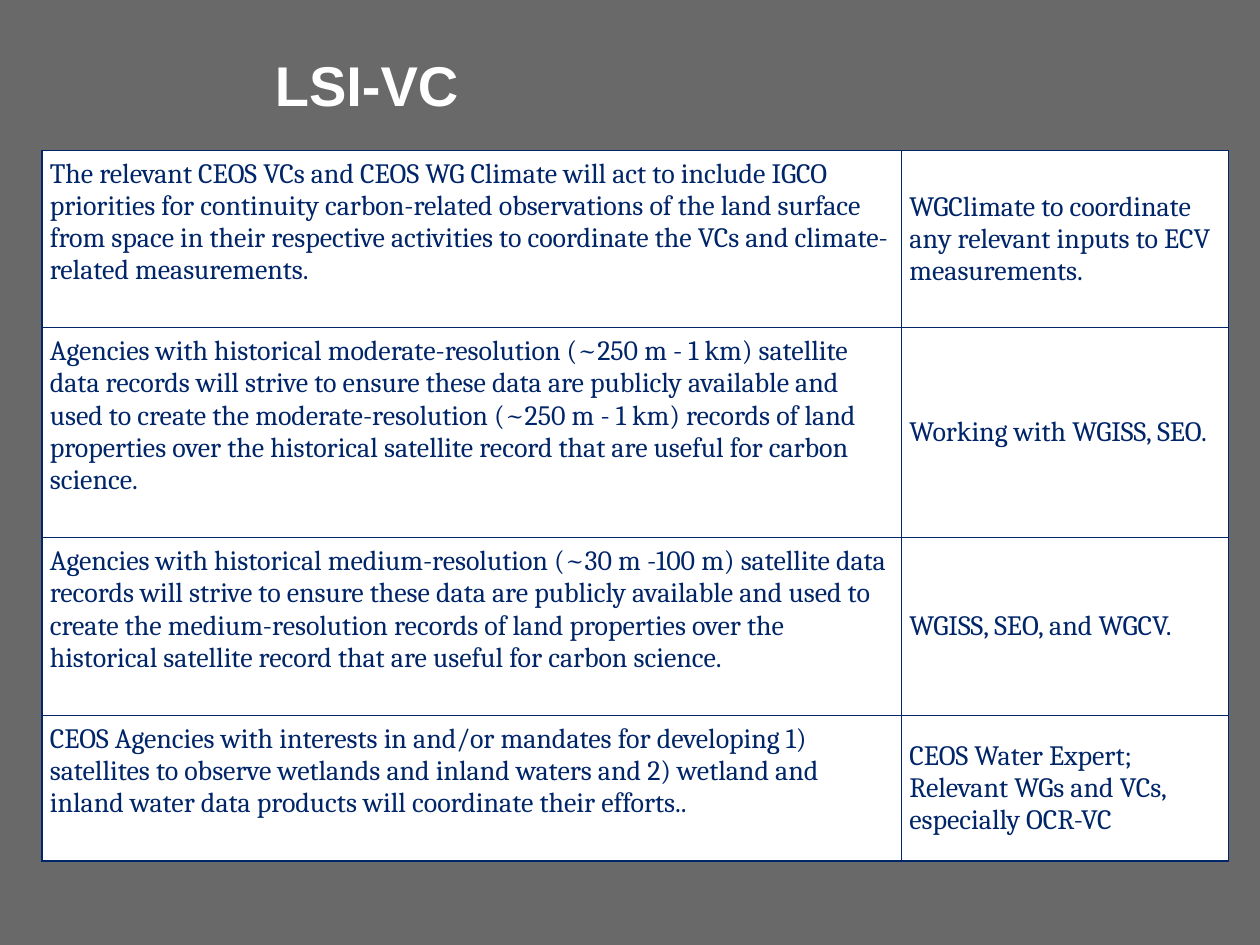
from lxml.etree import SubElement
from pptx import Presentation
from pptx.dml.color import RGBColor
from pptx.enum.text import MSO_ANCHOR
from pptx.oxml.ns import qn
from pptx.util import Pt

COLORS = {"page": "696969", "ink": "002569", "paper": "FFFFFF"}
COLUMN_WIDTHS = (491.2, 186.8)
ROWS = [
    (101.3,
     "The relevant CEOS VCs and CEOS WG Climate will act to include IGCO priorities for "
     "continuity carbon-related observations of the land surface from space in their "
     "respective activities to coordinate the VCs and climate-related measurements.",
     "WGClimate to coordinate any relevant inputs to ECV measurements."),
    (120,
     "Agencies with historical moderate-resolution (~250 m - 1 km) satellite data records "
     "will strive to ensure these data are publicly available and used to create the "
     "moderate-resolution (~250 m - 1 km) records of land properties over the historical "
     "satellite record that are useful for carbon science.",
     "Working with WGISS, SEO."),
    (101.5,
     "Agencies with historical medium-resolution (~30 m -100 m) satellite data records will "
     "strive to ensure these data are publicly available and used to create the "
     "medium-resolution records of land properties over the historical satellite record "
     "that are useful for carbon science.",
     "WGISS, SEO, and WGCV."),
    (83.2,
     "CEOS Agencies with interests in and/or mandates for developing 1) satellites to observe "
     "wetlands and inland waters and 2) wetland and inland water data products will "
     "coordinate their efforts..",
     "CEOS Water Expert;\vRelevant WGs and VCs, especially OCR-VC"),
]


def color(name):
    """Return the named palette colour."""
    return RGBColor.from_string(COLORS[name])


def style_text(frame, font, size, ink, bold=False):
    """Format every run of a text frame."""
    for para in frame.paragraphs:
        for span in para.runs:
            span.font.name = font
            span.font.size = Pt(size)
            span.font.bold = bold
            span.font.color.rgb = color(ink)


def add_borders(cell):
    """Draw a one-point line on each side of a cell."""
    properties = cell._tc.get_or_add_tcPr()
    for position, side in enumerate(("a:lnL", "a:lnR", "a:lnT", "a:lnB")):
        line = SubElement(properties, qn(side), w=str(Pt(1)))
        properties.insert(position, line)
        fill = SubElement(line, qn("a:solidFill"))
        SubElement(fill, qn("a:srgbClr"), val=COLORS["ink"])


def fill_cell(cell, text, anchor):
    """Write and style one table cell."""
    cell.text_frame.text = text
    style_text(cell.text_frame, "Cambria", 16, "ink")
    cell.vertical_anchor = anchor
    cell.margin_left = cell.margin_right = Pt(4.5)
    cell.margin_top = cell.margin_bottom = Pt(4.5)
    cell.fill.solid()
    cell.fill.fore_color.rgb = color("paper")
    add_borders(cell)


def add_actions(page, left, top):
    """Place the table of actions and their coordination."""
    height = sum(row[0] for row in ROWS)
    table = page.shapes.add_table(
        len(ROWS), len(COLUMN_WIDTHS), Pt(left), Pt(top),
        Pt(sum(COLUMN_WIDTHS)), Pt(height)).table
    table.first_row = table.horz_banding = False
    for column, width in zip(table.columns, COLUMN_WIDTHS):
        column.width = Pt(width)
    for row, (height, action, partners) in zip(table.rows, ROWS):
        row.height = Pt(height)
        fill_cell(row.cells[0], action, MSO_ANCHOR.TOP)
        fill_cell(row.cells[1], partners, MSO_ANCHOR.MIDDLE)


def add_title(page, left, top, width, height):
    """Place the slide title."""
    box = page.shapes.add_textbox(Pt(left), Pt(top), Pt(width), Pt(height))
    box.text_frame.word_wrap = True
    box.text_frame.text = "LSI-VC"
    style_text(box.text_frame, "Arial", 32, "paper", bold=True)


def main():
    """Build and save the slide."""
    deck = Presentation()
    deck.slide_width, deck.slide_height = Pt(720), Pt(540)
    page = deck.slides.add_slide(deck.slide_layouts[6])
    page.background.fill.solid()
    page.background.fill.fore_color.rgb = color("page")
    add_actions(page, 24, 86)
    add_title(page, 150, 25.2, 438, 82.8)
    deck.save("out.pptx")


if __name__ == "__main__":
    main()
